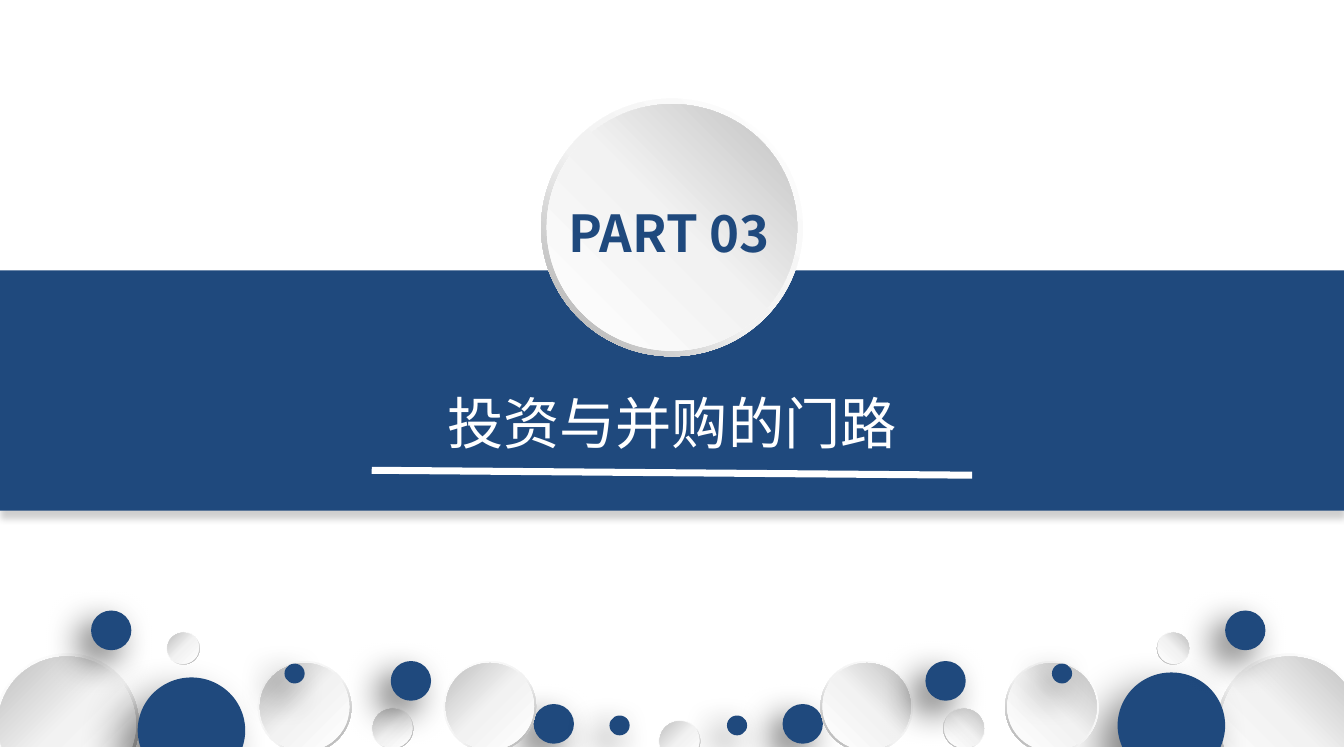
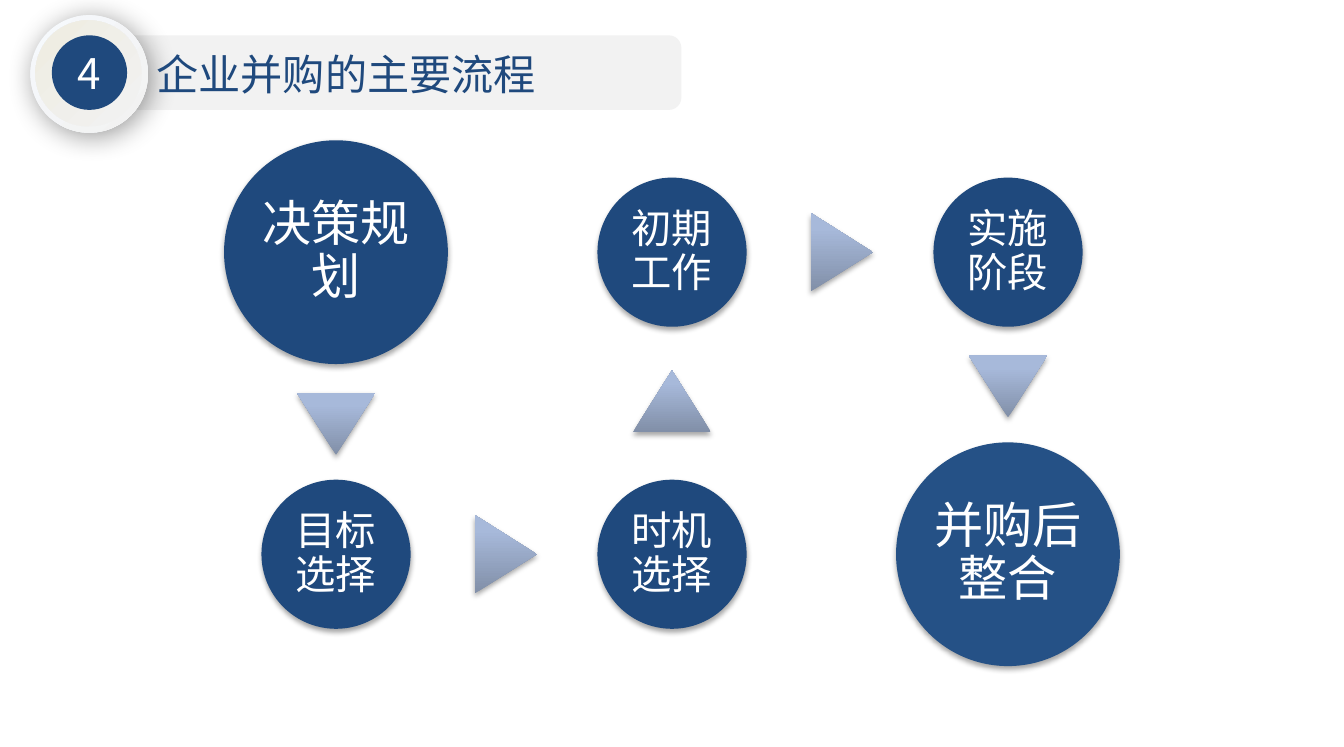
from lxml import etree
from pptx import Presentation, util as u
from pptx.dml.color import RGBColor
from pptx.enum import shapes, text
from pptx.oxml.ns import nsdecls, qn

NAVY = RGBColor(0x1F, 0x49, 0x7D)
LIGHT_NAVY = RGBColor(0x25, 0x51, 0x86)
WHITE = RGBColor(0xFF, 0xFF, 0xFF)
PALE = RGBColor(0xF2, 0xF2, 0xF2)
SILVER = RGBColor(0xBF, 0xBF, 0xBF)
GREY = RGBColor(0xA6, 0xA6, 0xA6)
FROST = RGBColor(0xF6, 0xF9, 0xFC)
CREAM = RGBColor(0xEE, 0xEC, 0xE1)
STEEL = RGBColor(0x81, 0x8F, 0xA8)
SKY = RGBColor(0xA7, 0xB9, 0xDA)

RIM_STOPS = ((0, WHITE), (55, PALE), (100, GREY))
FACE_STOPS = ((0, WHITE), (51, PALE), (100, SILVER))
ARROW_STOPS = ((0, STEEL), (80, SKY), (100, SKY))

BAND_SHADOW = (18, 4, 4, 90)
BIG_DOT_SHADOW = (50, 25, 15, 135)
DOT_SHADOW = (60, 20, 10, 135)
STEP_SHADOW = (35, 3.1, 1.8, 90)
BADGE_SHADOW = (40, 16, 3, 45)

HEADING_FONT = "Noto Sans CJK SC"
STEP_FONT = "Calibri"
SHAPE = shapes.MSO_SHAPE

presentation = Presentation()
presentation.slide_width = u.Inches(10.63)
presentation.slide_height = u.Inches(5.91)
UNIT = presentation.slide_width / 100
blank = presentation.slide_layouts[6]


def draw(slide, preset, box, fill, angle=0, shadow=None, rotation=0, flipped=False):
    shape = slide.shapes.add_shape(preset, *(round(v * UNIT) for v in box))
    shape.rotation = rotation
    shape.line.fill.background()
    shape.shadow.inherit = False
    properties = shape._element.spPr
    if flipped:
        properties.find(qn("a:xfrm")).set("flipH", "1")
    if isinstance(fill, RGBColor):
        shape.fill.solid()
        shape.fill.fore_color.rgb = fill
    else:
        stops = "".join(
            f'<a:gs pos="{share * 1000}"><a:srgbClr val="{colour}"/></a:gs>'
            for share, colour in fill
        )
        properties.find(qn("a:prstGeom")).addnext(etree.fromstring(
            f'<a:gradFill {nsdecls("a")} rotWithShape="{int(not rotation)}">'
            f'<a:gsLst>{stops}</a:gsLst><a:lin ang="{angle * 60000}" scaled="0"/></a:gradFill>'
        ))
    if shadow:
        alpha, blur, distance, direction = shadow
        properties.find(qn("a:effectLst")).append(etree.fromstring(
            f'<a:outerShdw {nsdecls("a")} blurRad="{u.Pt(blur)}" dist="{u.Pt(distance)}" '
            f'dir="{direction * 60000}" algn="ctr" rotWithShape="0"><a:srgbClr val="000000">'
            f'<a:alpha val="{alpha * 1000}"/></a:srgbClr></a:outerShdw>'
        ))
    return shape


def write(shape, words, size, colour, font=HEADING_FONT, align=text.PP_ALIGN.CENTER,
          bold=False, margin=0.03, spacing=1.0):
    frame = shape.text_frame
    frame.word_wrap = True
    frame.vertical_anchor = text.MSO_ANCHOR.MIDDLE
    frame.margin_left = frame.margin_right = u.Inches(margin)
    frame.margin_top = frame.margin_bottom = u.Inches(0.03)
    paragraph = frame.paragraphs[0]
    paragraph.text = words
    paragraph.alignment = align
    paragraph.line_spacing = spacing
    paragraph.font.name = font
    paragraph.font.size = u.Pt(size)
    paragraph.font.bold = bold
    paragraph.font.color.rgb = colour


section = presentation.slides.add_slide(blank)
draw(section, SHAPE.RECTANGLE, (0, 20.13, 100, 17.87), NAVY, shadow=BAND_SHADOW)

MIRROR = 100.94
ROUNDNESS = 0.985
FACE_SHARE = 0.957
side_bubbles = [
    ("disc", 90.59, 48.64, 10.72),
    ("big dot", 83.16, 50.05, 8),
    ("dot", 58.23, 52.4, 3),
    ("disc", 61.05, 49.2, 6.87),
    ("disc", 86.08, 47.04, 2.45),
    ("disc", 70.18, 52.68, 3.1),
    ("dot", 68.86, 49.2, 3),
    ("dot", 54.09, 53.25, 1.5),
    ("disc", 74.79, 49.2, 6.96),
    ("dot", 91.16, 45.44, 3),
    ("dot", 78.27, 49.39, 1.5),
]
bubbles = [(*bubble, False) for bubble in side_bubbles]
bubbles.append(("disc", 40.26, 7.34, 19.47, False))
for kind, left, top, size in side_bubbles:
    if kind == "big dot":
        bubbles.append((kind, 10.25, 50.42, size, True))
    else:
        bubbles.append((kind, MIRROR - left - size, top, size, True))
bubbles.append(("disc", 49.01, 53.62, 3.1, True))

for kind, left, top, size, flipped in bubbles:
    height = size * ROUNDNESS
    if kind == "disc":
        rim = draw(section, SHAPE.DONUT, (left, top, size, height), RIM_STOPS, 135,
                   flipped=flipped)
        rim.adjustments[0] = 0.05
        inset = (1 - FACE_SHARE) / 2
        face = (left + size * inset, top + height * inset, size * FACE_SHARE, height * FACE_SHARE)
        draw(section, SHAPE.OVAL, face, FACE_STOPS, 315, flipped=flipped)
    else:
        shadow = BIG_DOT_SHADOW if kind == "big dot" else DOT_SHADOW
        draw(section, SHAPE.OVAL, (left, top, size, height), NAVY, shadow=shadow, flipped=flipped)

for words, box, size, colour, bold in (
    ("投资与并购的门路", (25.68, 28.5, 48.64, 5.83), 32, WHITE, False),
    ("PART 03", (40.26, 14.58, 19.1, 5.36), 29, NAVY, True),
):
    label = section.shapes.add_textbox(*(round(v * UNIT) for v in box))
    write(label, words, size, colour, bold=bold)

underline = section.shapes.add_connector(
    shapes.MSO_CONNECTOR.STRAIGHT, *(round(v * UNIT) for v in (27.66, 35, 72.34, 35.37)))
underline.line.color.rgb = WHITE
underline.line.width = u.Pt(4)
etree.SubElement(underline._element.spPr, qn("a:effectLst"))

process = presentation.slides.add_slide(blank)
COLUMNS = (25, 50, 75)
ROWS = (18.77, 41.25)
BIG_STEP, SMALL_STEP = 16.65, 11.1
ARROW_WIDTH, ARROW_HEIGHT = 5.83, 4.61
ARROW_NUDGE = 0.14
steps = [
    ("决策规划", 0, 0, BIG_STEP, NAVY),
    ("目标选择", 0, 1, SMALL_STEP, NAVY),
    ("时机选择", 1, 1, SMALL_STEP, NAVY),
    ("初期工作", 1, 0, SMALL_STEP, NAVY),
    ("实施阶段", 2, 0, SMALL_STEP, NAVY),
    ("并购后整合", 2, 1, BIG_STEP, LIGHT_NAVY),
]
for words, column, row, size, colour in steps:
    box = (COLUMNS[column] - size / 2, ROWS[row] - size / 2, size, size)
    step = draw(process, SHAPE.OVAL, box, colour, shadow=STEP_SHADOW)
    write(step, words, 28 if size == BIG_STEP else 23, WHITE, STEP_FONT, spacing=0.9)

ROTATIONS = {(1, 0): 90, (0, 1): 180, (0, -1): 0}
for (_, column, row, size, _), (_, next_column, next_row, next_size, _) in zip(steps, steps[1:]):
    across, down = next_column - column, next_row - row
    shift = (size - next_size) / 4 + ARROW_NUDGE
    center_x = (COLUMNS[column] + COLUMNS[next_column]) / 2 + across * shift
    center_y = (ROWS[row] + ROWS[next_row]) / 2 + down * shift
    box = (center_x - ARROW_WIDTH / 2, center_y - ARROW_HEIGHT / 2, ARROW_WIDTH, ARROW_HEIGHT)
    draw(process, SHAPE.ISOSCELES_TRIANGLE, box, ARROW_STOPS, 270, STEP_SHADOW,
         ROTATIONS[across, down])

draw(process, SHAPE.ROUNDED_RECTANGLE, (6.02, 2.63, 44.68, 5.55), PALE)
draw(process, SHAPE.OVAL, (2.26, 1.13, 8.75, 8.75), ((0, FROST), (100, PALE)), 45, BADGE_SHADOW)
draw(process, SHAPE.OVAL, (2.63, 1.51, 7.9, 7.9), ((0, PALE), (100, CREAM)), 225)
badge = draw(process, SHAPE.OVAL, (3.86, 2.63, 5.6, 5.55), NAVY)
write(badge, "4", 24, WHITE)
title = process.shapes.add_textbox(*(round(v * UNIT) for v in (10.72, 3.1, 39.79, 4.7)))
write(title, "企业并购的主要流程", 24, NAVY, align=text.PP_ALIGN.LEFT, margin=0.1)

presentation.save("out.pptx")
